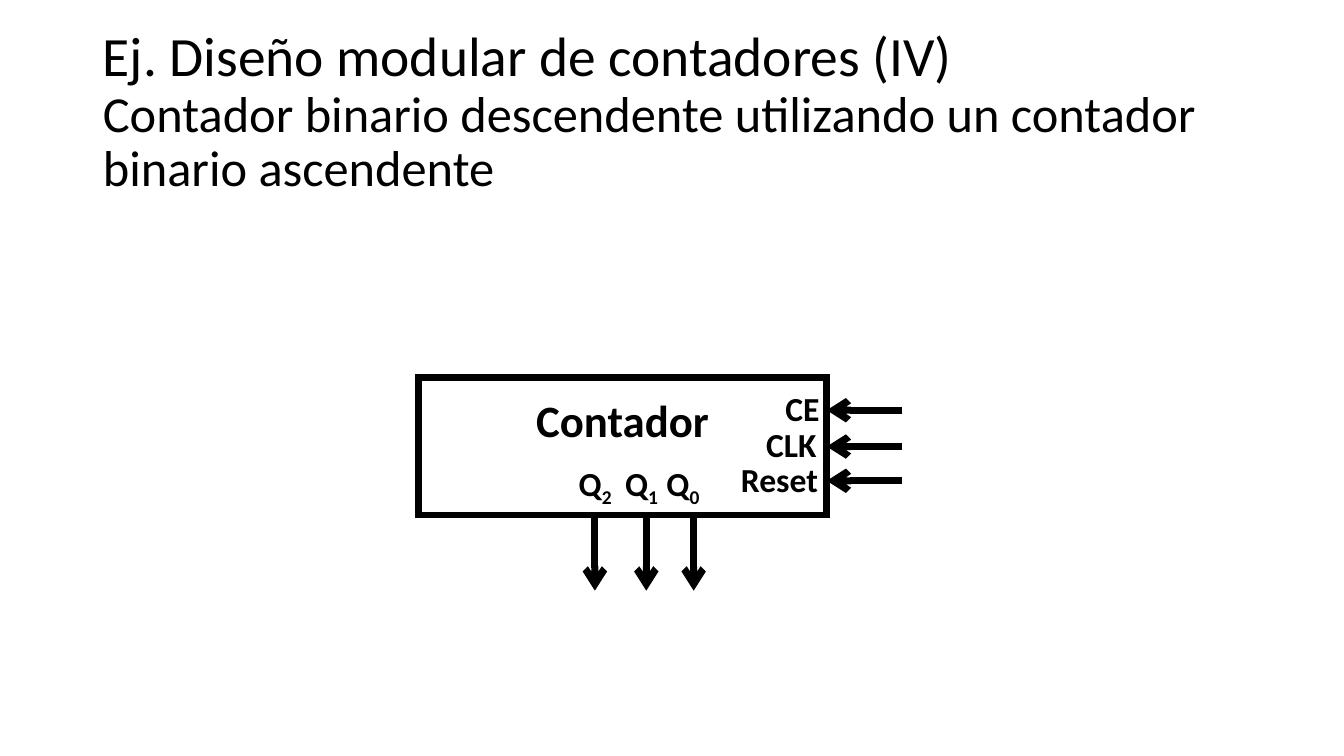
from pptx import Presentation
from pptx.dml.color import RGBColor
from pptx.enum.shapes import MSO_CONNECTOR, MSO_SHAPE
from pptx.enum.text import MSO_ANCHOR, MSO_AUTO_SIZE, PP_ALIGN
from pptx.oxml.ns import qn
from pptx.util import Inches, Pt
from lxml.etree import SubElement

COLORS = {"ink": "000000", "paper": "FFFFFF"}
LINE_WIDTH = Pt(5)
INPUTS = [("CE", 0.59, 0.32), ("CLK", 0.78, 0.68), ("Reset", 1.03, 1.02)]
OUTPUTS = [("2", 1.75), ("1", 2.26), ("0", 2.73)]
OUTPUT_TABS = [0.46, 0.87]
ARROW_LENGTH = 0.75


def color(name):
    return RGBColor.from_string(COLORS[name])


def set_values(target, values):
    for name, value in values.items():
        setattr(target, name, value)


def add_run(paragraph, text, size, bold=True, baseline=None):
    run = paragraph.add_run()
    run.text = text
    set_values(run.font, {"name": "Calibri", "size": Pt(size), "bold": bold})
    run.font.color.rgb = color("ink")
    if baseline:
        run.font._element.set("baseline", str(baseline))


def add_label(slide, left, top, width):
    box = slide.shapes.add_textbox(Inches(left), Inches(top), Inches(width), Inches(0.5))
    box.text_frame.word_wrap = True
    paragraph = box.text_frame.paragraphs[0]
    paragraph.alignment = PP_ALIGN.LEFT
    return box.text_frame, paragraph


def add_arrow(slide, *points):
    arrow = slide.shapes.add_connector(MSO_CONNECTOR.STRAIGHT, *map(Inches, points))
    arrow.line.width = LINE_WIDTH
    arrow.line.color.rgb = color("ink")
    SubElement(arrow.line._get_or_add_ln(), qn("a:tailEnd"), type="arrow")
    SubElement(arrow._element.spPr, qn("a:effectLst"))


def add_title(slide, left, top, width, height):
    title = slide.shapes.title
    set_values(title, {"left": Inches(left), "top": Inches(top),
                       "width": Inches(width), "height": Inches(height)})
    set_values(title.text_frame, {"word_wrap": True, "auto_size": MSO_AUTO_SIZE.NONE,
                                  "vertical_anchor": MSO_ANCHOR.MIDDLE})
    paragraph = title.text_frame.paragraphs[0]
    set_values(paragraph, {"alignment": PP_ALIGN.LEFT, "line_spacing": 0.9})
    add_run(paragraph, "Ej. Diseño modular de contadores (IV)", 39.6, False)
    paragraph.add_line_break()
    add_run(paragraph, "Contador binario descendente utilizando un contador binario ascendente", 36, False)


def add_block(slide, left, top, width, height):
    block = slide.shapes.add_shape(MSO_SHAPE.RECTANGLE, Inches(left), Inches(top),
                                   Inches(width), Inches(height))
    block.shadow.inherit = False
    block.fill.solid()
    block.fill.fore_color.rgb = color("paper")
    block.line.color.rgb = color("ink")
    block.line.width = LINE_WIDTH
    SubElement(block.line._get_or_add_ln(), qn("a:miter"), lim="800000")
    set_values(block.text_frame, {"vertical_anchor": MSO_ANCHOR.TOP, "margin_top": Inches(0.15)})
    paragraph = block.text_frame.paragraphs[0]
    paragraph.alignment = PP_ALIGN.CENTER
    add_run(paragraph, "Contador", 32)


def add_inputs(slide, left, top, width):
    right = left + width
    for name, label_width, offset in INPUTS:
        y = top + offset
        add_arrow(slide, right + ARROW_LENGTH, y, right, y)
        _, paragraph = add_label(slide, right + 0.08 - label_width, y - 0.27, label_width)
        add_run(paragraph, name, 24)


def add_outputs(slide, left, top, height):
    bottom = top + height
    frame, paragraph = add_label(slide, left + 0.96, bottom - 0.57, 2.09)
    frame.margin_left = Inches(0.63)
    tabs = SubElement(paragraph._p.get_or_add_pPr(), qn("a:tabLst"))
    for position in OUTPUT_TABS:
        SubElement(tabs, qn("a:tab"), pos=str(Inches(position)), algn="l")
    for index, (digit, offset) in enumerate(OUTPUTS):
        add_run(paragraph, "\tQ" if index else "Q", 24)
        add_run(paragraph, digit, 24, baseline=-25000)
        x = left + offset
        add_arrow(slide, x, bottom, x, bottom + ARROW_LENGTH)


def add_counter(slide, left, top, width, height):
    add_block(slide, left, top, width, height)
    add_inputs(slide, left, top, width)
    add_outputs(slide, left, top, height)


def main():
    presentation = Presentation()
    set_values(presentation, {"slide_width": Inches(13.33), "slide_height": Inches(7.5)})
    slide = presentation.slides.add_slide(presentation.slide_layouts[5])
    add_title(slide, 0.92, 0.4, 11.94, 1.45)
    add_counter(slide, 4.15, 3.75, 4.05, 1.36)
    presentation.save("out.pptx")


if __name__ == "__main__":
    main()
